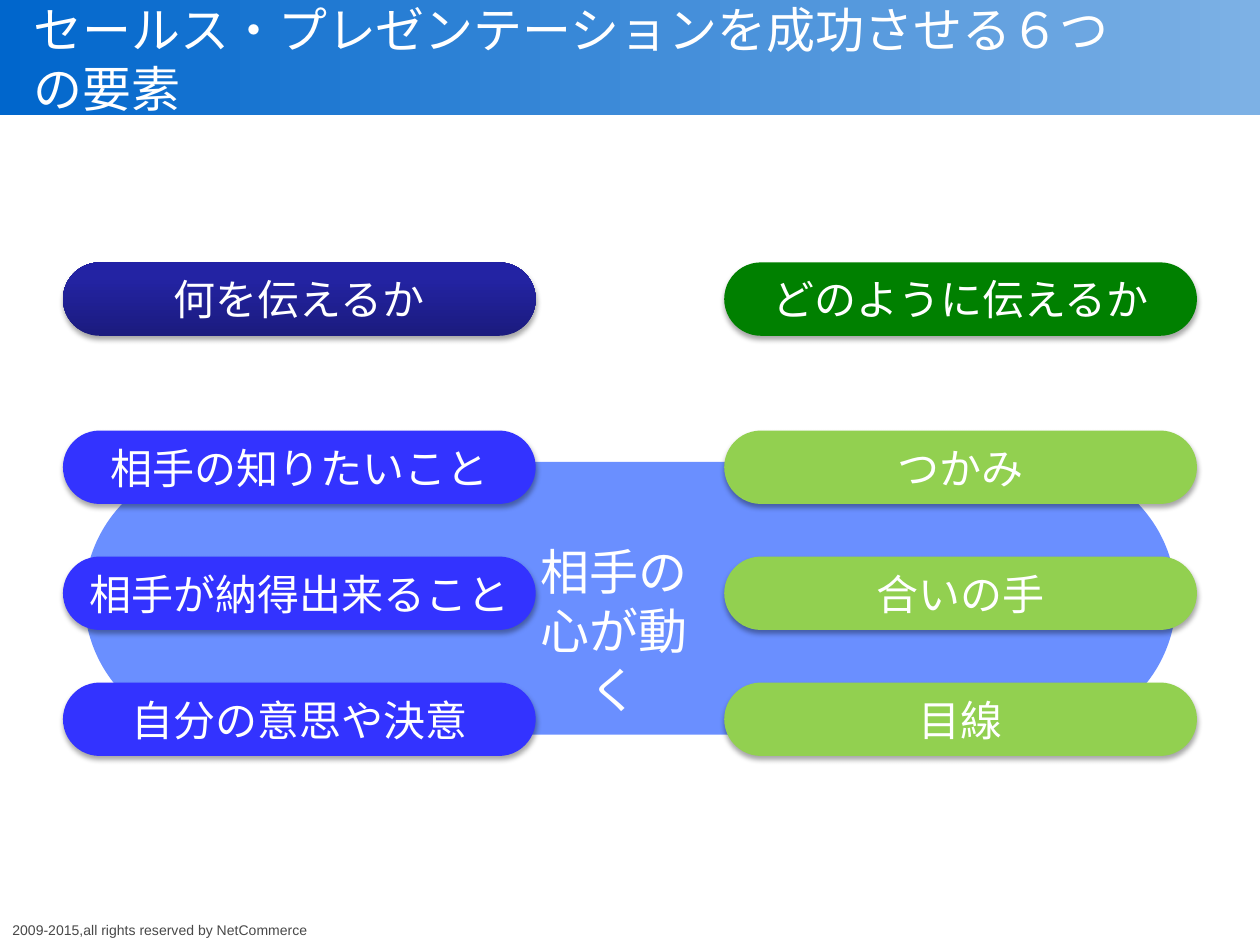
from lxml.etree import SubElement
from pptx import Presentation
from pptx.dml.color import RGBColor
from pptx.enum.shapes import MSO_SHAPE
from pptx.enum.text import MSO_ANCHOR, MSO_AUTO_SIZE, PP_ALIGN
from pptx.oxml.ns import qn
from pptx.util import Cm, Pt

HUES = {
    "white": "FFFFFF", "grey": "484848", "sky": "0066CC", "pale": "7DB1E5",
    "oval": "3366FF", "blue": "3333FF", "green": "008000", "lime": "92D050",
    "navy": "1B1B7E", "deep": "2323A3", "top": "2020A6", "black": "000000",
}
FONT = "Arial"
NAVY = [(0, "navy"), (80, "deep"), (100, "top")]


def node(parent, tag, **attrs):
    return SubElement(parent, qn(tag), {k: str(v) for k, v in attrs.items()})


def paint(shape, hue):
    """Fill with one colour, or with a bottom-to-top or left-to-right blend."""
    shape.shadow.inherit = False
    shape.line.fill.background()
    shape.fill.solid()
    shape.fill.fore_color.rgb = RGBColor.from_string(HUES[hue])


def blend(shape, stops, angle):
    shape.fill.gradient()
    shape.fill.gradient_angle = angle
    stop_list = shape._element.spPr.find(".//" + qn("a:gsLst"))
    for old in list(stop_list):
        stop_list.remove(old)
    for pos, hue in stops:
        stop = node(stop_list, "a:gs", pos=pos * 1000)
        node(stop, "a:srgbClr", val=HUES[hue])


def shade(shape):
    """Soft shadow straight below the shape."""
    effects = shape._element.spPr.find(qn("a:effectLst"))
    drop = node(effects, "a:outerShdw", blurRad=Pt(3.1), dist=Pt(1.8),
                dir=5400000, rotWithShape=0)
    node(node(drop, "a:srgbClr", val=HUES["black"]), "a:alpha", val=35000)


def style(frame, size, hue="white", align=PP_ALIGN.CENTER):
    for para in frame.paragraphs:
        para.alignment = align
        for run in para.runs:
            run.font.size = Pt(size)
            run.font.name = FONT
            run.font.color.rgb = RGBColor.from_string(HUES[hue])
            node(run.font._element, "a:ea", typeface=FONT)


def header(slide, text, x, y, w, h):
    # Banner goes behind the title
    band = slide.shapes.add_shape(MSO_SHAPE.RECTANGLE, x, y, w, h)
    paint(band, "sky")
    blend(band, [(0, "sky"), (100, "pale")], 0)
    slide.shapes._spTree.insert(2, band._element)

    title = slide.shapes.title
    title.left, title.top = x + Cm(0.42), y + Cm(0.43)
    title.width, title.height = Cm(22.86), Cm(1.48)
    frame = title.text_frame
    frame.text = text
    frame.word_wrap = True
    frame.auto_size = MSO_AUTO_SIZE.NONE
    frame.vertical_anchor = MSO_ANCHOR.MIDDLE
    style(frame, 28, align=PP_ALIGN.LEFT)


def heart(slide, lines, x, y, w, h):
    group = slide.shapes.add_group_shape()
    back = group.shapes.add_shape(MSO_SHAPE.ROUNDED_RECTANGLE, x, y, w, h)
    back.adjustments[0] = 0.5
    paint(back, "oval")
    tint = back._element.spPr.find(qn("a:solidFill"))[0]
    node(tint, "a:alpha", val=73000)

    # Message between the two columns
    box = group.shapes.add_textbox(x + Cm(8.97), y + Cm(1.48), Cm(4.09), Cm(2.62))
    frame = box.text_frame
    frame.word_wrap = True
    frame.margin_left, frame.margin_right = Cm(0.13), Cm(0.81)
    frame.text = "\n".join(lines)
    style(frame, 28)


def pill(slide, text, hue, x, y, w, h):
    shape = slide.shapes.add_shape(MSO_SHAPE.ROUNDED_RECTANGLE, x, y, w, h)
    shape.adjustments[0] = 0.5
    paint(shape, hue)
    shade(shape)
    frame = shape.text_frame
    frame.text = text
    frame.word_wrap = False
    frame.vertical_anchor = MSO_ANCHOR.MIDDLE
    style(frame, 24)
    return shape


def column(slide, head, items, hues, x, y, w):
    """A heading pill and, lower down, evenly spaced item pills."""
    tall = Cm(1.48)
    first = pill(slide, head, hues[0], x, y, w, tall)
    for i, item in enumerate(items):
        pill(slide, item, hues[1], x, y + Cm(3.39) + i * Cm(2.54), w, tall)
    return first


def footer(slide, text, x, y, w, h):
    box = slide.shapes.add_textbox(x, y, w, h)
    box.text_frame.text = text
    box.text_frame.word_wrap = False
    style(box.text_frame, 8, "grey", PP_ALIGN.LEFT)


def main():
    deck = Presentation()
    deck.slide_width, deck.slide_height = Cm(25.4), Cm(19.05)
    slide = deck.slides.add_slide(deck.slide_layouts[5])

    header(slide, "セールス・プレゼンテーションを成功させる６つの要素",
           0, 0, deck.slide_width, Cm(2.33))
    heart(slide, ["相手の", "心が動く"], Cm(1.7), Cm(9.31), Cm(22.01), Cm(5.5))

    # What to say, and how to say it
    what = column(slide, "何を伝えるか",
                  ["相手の知りたいこと", "相手が納得出来ること", "自分の意思や決意"],
                  ("navy", "blue"), Cm(1.27), Cm(5.29), Cm(9.53))
    blend(what, NAVY, 90)
    column(slide, "どのように伝えるか", ["つかみ", "合いの手", "目線"],
           ("green", "lime"), Cm(14.6), Cm(5.29), Cm(9.53))

    footer(slide, "2009-2015,all rights reserved by NetCommerce",
           0, Cm(18.46), Cm(6.53), Cm(0.6))
    deck.save("out.pptx")


if __name__ == "__main__":
    main()
